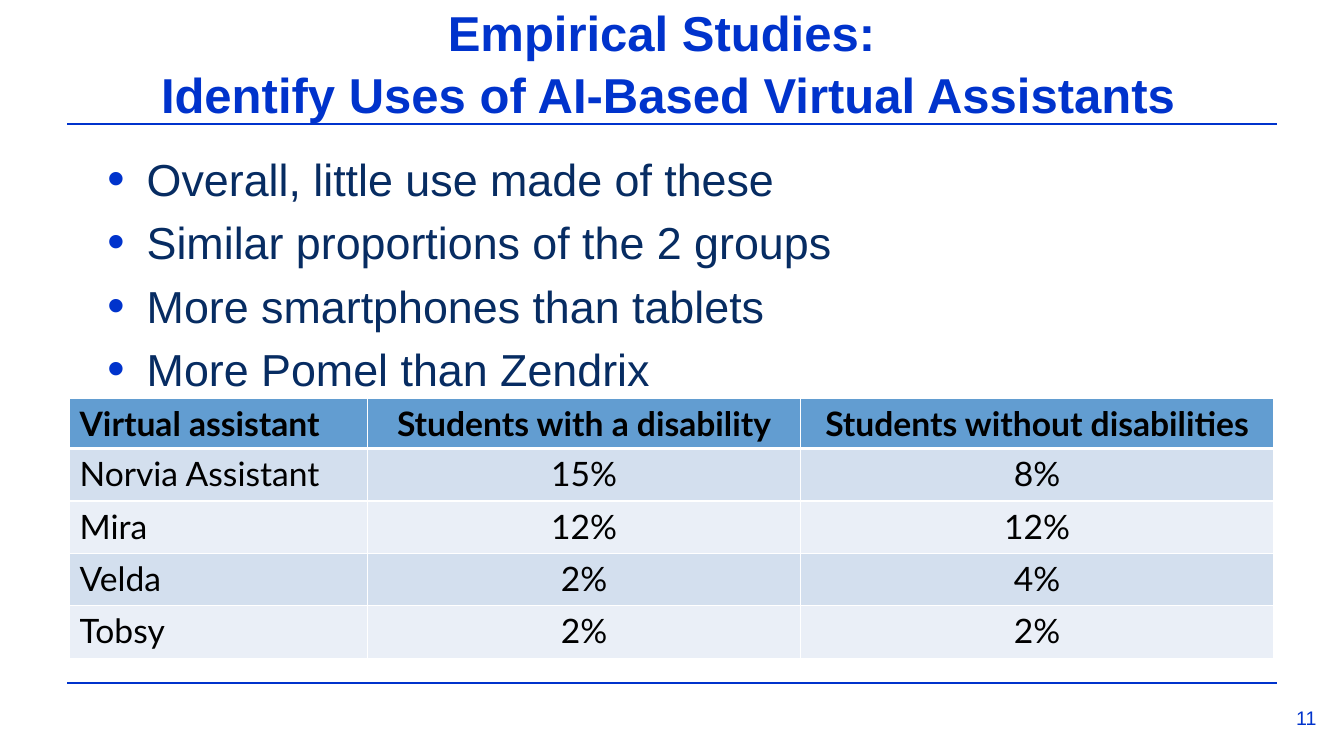
from dataclasses import dataclass
from typing import Any

from lxml import etree
from pptx import Presentation
from pptx import util as u
from pptx.dml import color
from pptx.enum import shapes, text
from pptx.oxml import ns

COLOURS = {
    "blue": "0033CC",
    "navy": "072C62",
    "black": "000000",
    "white": "FFFFFF",
    "header": "629DD1",
    "band_dark": "D3DFEE",
    "band_light": "EAEFF7",
}
WIDTH, HEIGHT = u.Inches(13.33), u.Inches(7.5)
COLUMN, ROW = WIDTH / 40, HEIGHT / 30  # grid of 40 columns and 30 rows
CENTER, LEFT = text.PP_ALIGN.CENTER, text.PP_ALIGN.LEFT


@dataclass
class TextBlock:
    column: float
    row: float
    columns: float
    rows: float
    lines: list[str]
    font: dict[str, Any]
    colour: str
    paragraph: dict[str, Any]
    frame: dict[str, Any]
    bullets: bool = False


@dataclass
class Rule:
    row: float
    first_column: float = 2
    last_column: float = 38


BLOCKS = [
    TextBlock(0.6, 0, 38.6, 4.68,
              ["Empirical Studies: \vIdentify Uses of AI-Based Virtual Assistants"],
              {"name": "Arial", "size": u.Pt(35), "bold": True}, "blue",
              {"alignment": CENTER, "line_spacing": 1.05},
              {"margin_top": 0, "margin_bottom": 0}),
    TextBlock(2, 5.72, 36, 10,
              ["Overall, little use made of these",
               "Similar proportions of the 2 groups",
               "More smartphones than tablets",
               "More Pomel than Zendrix"],
              {"name": "Arial", "size": u.Pt(32)}, "navy",
              {"alignment": LEFT, "line_spacing": 1.05}, {}, bullets=True),
    TextBlock(37.75, 27.8, 2.25, 1.68, ["11"],
              {"name": "Arial", "size": u.Pt(14)}, "blue",
              {"alignment": CENTER}, {}),
]
RULES = [Rule(4.92), Rule(27.12)]

USAGE = [
    ("Virtual assistant", "Students with a disability", "Students without disabilities"),
    ("Norvia Assistant", "15%", "8%"),
    ("Mira", "12%", "12%"),
    ("Velda", "2%", "4%"),
    ("Tobsy", "2%", "2%"),
]
USAGE_COLUMNS = [8.88, 12.87, 14.1]
USAGE_ROWS = [1.92] + [2.08] * 4


def rgb(name: str) -> color.RGBColor:
    return color.RGBColor.from_string(COLOURS[name])


def apply_format(target: Any, values: dict[str, Any]) -> None:
    for name, value in values.items():
        setattr(target, name, value)


def add_child(parent: Any, tag: str, **attributes: str) -> Any:
    return etree.SubElement(parent, ns.qn(tag), attributes)


def write_paragraph(para: Any, line: str, paragraph: dict[str, Any],
                    font: dict[str, Any], colour: str) -> None:
    para.text = line
    apply_format(para, paragraph)
    for span in para.runs:
        apply_format(span.font, font)
        span.font.color.rgb = rgb(colour)


def add_bullet(para: Any) -> None:
    properties = para._p.get_or_add_pPr()
    properties.set("marL", str(u.Inches(0.69)))
    properties.set("indent", str(u.Inches(-0.39)))
    add_child(add_child(properties, "a:buClr"), "a:srgbClr", val=COLOURS["blue"])
    add_child(properties, "a:buSzPct", val="110000")
    add_child(properties, "a:buFont", typeface="Arial")
    add_child(properties, "a:buChar", char="•")


def add_text(page: Any, block: TextBlock) -> None:
    box = page.shapes.add_textbox(
        round(block.column * COLUMN), round(block.row * ROW),
        round(block.columns * COLUMN), round(block.rows * ROW))
    frame = box.text_frame
    frame.word_wrap = True
    apply_format(frame, block.frame)
    for index, line in enumerate(block.lines):
        para = frame.add_paragraph() if index else frame.paragraphs[0]
        if block.bullets:
            add_bullet(para)
        if index:
            para.space_before = u.Pt(5)
        write_paragraph(para, line, block.paragraph, block.font, block.colour)


def add_rule(page: Any, rule: Rule) -> None:
    y = round(rule.row * ROW)
    line = page.shapes.add_connector(
        shapes.MSO_CONNECTOR.STRAIGHT,
        round(rule.first_column * COLUMN), y, round(rule.last_column * COLUMN), y)
    line.line.color.rgb = rgb("blue")
    line.line.width = u.Pt(1.5)
    add_child(line._element.spPr, "a:effectLst")


def add_borders(cell: Any, widths: dict[str, float]) -> None:
    properties = cell._tc.get_or_add_tcPr()
    for side, width in widths.items():
        border = add_child(properties, f"a:ln{side}", w=str(u.Pt(width)))
        add_child(add_child(border, "a:solidFill"), "a:srgbClr", val=COLOURS["white"])


def add_usage_table(page: Any) -> None:
    table = page.shapes.add_table(
        len(USAGE_ROWS), len(USAGE_COLUMNS), round(2.07 * COLUMN), round(15.8 * ROW),
        round(sum(USAGE_COLUMNS) * COLUMN), round(sum(USAGE_ROWS) * ROW)).table
    for column, width in zip(table.columns, USAGE_COLUMNS):
        column.width = round(width * COLUMN)
    for row, height in zip(table.rows, USAGE_ROWS):
        row.height = round(height * ROW)
    for r, values in enumerate(USAGE):
        fill = "header" if r == 0 else ("band_light", "band_dark")[r % 2]
        for c, value in enumerate(values):
            cell = table.cell(r, c)
            add_borders(cell, {"L": 1, "R": 1, "T": 3 if r == 1 else 1,
                               "B": 3 if r == 0 else 1})
            cell.fill.solid()
            cell.fill.fore_color.rgb = rgb(fill)
            write_paragraph(cell.text_frame.paragraphs[0], value,
                            {"alignment": CENTER if c else LEFT},
                            {"name": "Lato", "size": u.Pt(24), "bold": r == 0}, "black")


def main() -> None:
    deck = Presentation()
    apply_format(deck, {"slide_width": WIDTH, "slide_height": HEIGHT})
    page = deck.slides.add_slide(deck.slide_layouts[6])
    for rule in RULES:
        add_rule(page, rule)
    for block in BLOCKS:
        add_text(page, block)
    add_usage_table(page)
    deck.save("out.pptx")


if __name__ == "__main__":
    main()
